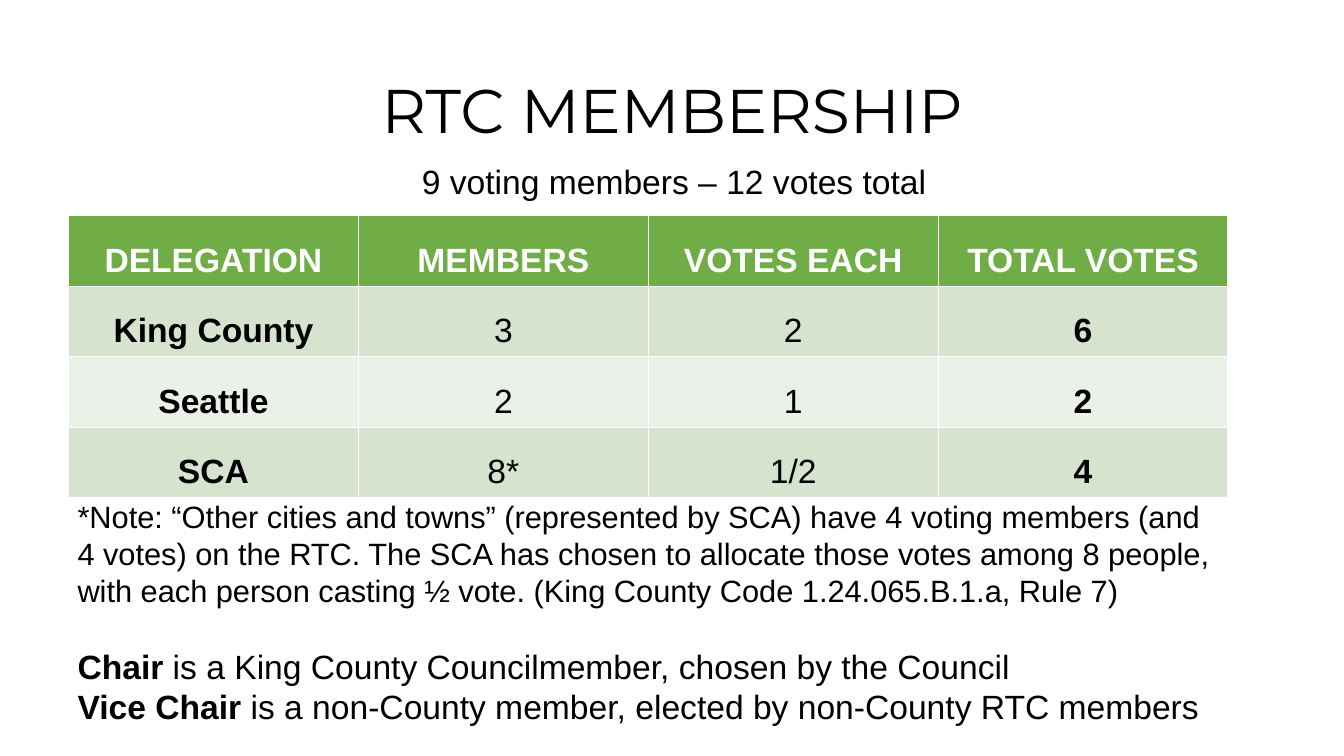
from dataclasses import dataclass

from pptx import Presentation
from pptx.dml.color import RGBColor
from pptx.enum.text import MSO_ANCHOR, PP_ALIGN
from pptx.util import Emu, Inches, Pt

BLACK = RGBColor(0x00, 0x00, 0x00)
WHITE = RGBColor(0xFF, 0xFF, 0xFF)
HEADER_GREEN = RGBColor(0x70, 0xAD, 0x47)
DARK_BAND = RGBColor(0xD5, 0xE3, 0xCF)
LIGHT_BAND = RGBColor(0xEB, 0xF1, 0xE9)

SLIDE_WIDTH, SLIDE_HEIGHT = Inches(13.33), Inches(7.5)
BODY_SIZE, NOTE_SIZE, TITLE_SIZE = 24, 22, 44


@dataclass(frozen=True)
class Area:
    """A rectangle in percent of the slide's width and height."""
    left: float
    top: float
    width: float
    height: float

    def lengths(self) -> tuple[Emu, Emu, Emu, Emu]:
        return (Emu(int(SLIDE_WIDTH * self.left / 100)),
                Emu(int(SLIDE_HEIGHT * self.top / 100)),
                Emu(int(SLIDE_WIDTH * self.width / 100)),
                Emu(int(SLIDE_HEIGHT * self.height / 100)))


@dataclass(frozen=True)
class Delegation:
    name: str
    members: str
    votes_each: str
    total_votes: str

    def texts(self) -> tuple[str, ...]:
        return self.name, self.members, self.votes_each, self.total_votes


@dataclass(frozen=True)
class Officer:
    role: str
    rule: str


TITLE_AREA = Area(6.9, 5.33, 86.27, 19.33)
SUBTITLE_AREA = Area(7.13, 20.67, 86.05, 6.67)
TABLE_AREA = Area(5.1, 28.53, 86.27, 34.93)
NOTE_AREA = Area(5.03, 65.2, 86.05, 31.87)

HEADINGS = Delegation("DELEGATION", "MEMBERS", "VOTES EACH", "TOTAL VOTES")
DELEGATIONS = (
    Delegation("King County", "3", "2", "6"),
    Delegation("Seattle", "2", "1", "2"),
    Delegation("SCA", "8*", "1/2", "4"),
)
NOTE = ("*Note: “Other cities and towns” (represented by SCA) have 4 voting members "
        "(and 4 votes) on the RTC. The SCA has chosen to allocate those votes among "
        "8 people, with each person casting ½ vote. "
        "(King County Code 1.24.065.B.1.a, Rule 7)")
OFFICERS = (
    Officer("Chair", " is a King County Councilmember, chosen by the Council"),
    Officer("Vice Chair", " is a non-County member, elected by non-County RTC members"),
)


def add_span(para, text: str, *, size: float = BODY_SIZE, font: str = "Arial",
             color: RGBColor = BLACK, bold: bool = False) -> None:
    span = para.add_run()
    span.text = text
    span.font.size = Pt(size)
    span.font.name = font
    span.font.color.rgb = color
    span.font.bold = bold


def add_text_frame(page, area: Area, anchor: MSO_ANCHOR = MSO_ANCHOR.TOP):
    frame = page.shapes.add_textbox(*area.lengths()).text_frame
    frame.word_wrap = True
    frame.vertical_anchor = anchor
    return frame


def add_headline(page) -> None:
    title = add_text_frame(page, TITLE_AREA, MSO_ANCHOR.MIDDLE).paragraphs[0]
    title.alignment = PP_ALIGN.CENTER
    title.line_spacing = 0.9
    add_span(title, "RTC MEMBERSHIP", size=TITLE_SIZE, font="Montserrat")

    subtitle = add_text_frame(page, SUBTITLE_AREA).paragraphs[0]
    subtitle.alignment = PP_ALIGN.CENTER
    add_span(subtitle, "9 voting members – 12 votes total")


def fill_cell(cell, text: str, *, fill: RGBColor, color: RGBColor, bold: bool) -> None:
    cell.fill.solid()
    cell.fill.fore_color.rgb = fill
    cell.vertical_anchor = MSO_ANCHOR.MIDDLE
    para = cell.text_frame.paragraphs[0]
    para.alignment = PP_ALIGN.CENTER
    para.line_spacing = 1.5
    para.space_before = para.space_after = Pt(6)
    add_span(para, text, color=color, bold=bold)


def add_votes_table(page) -> None:
    """The default table style supplies the white rules between the cells."""
    lines = (HEADINGS, *DELEGATIONS)
    column_count = len(HEADINGS.texts())
    table = page.shapes.add_table(len(lines), column_count, *TABLE_AREA.lengths()).table
    for row, line in enumerate(lines):
        is_header = row == 0
        band = DARK_BAND if row % 2 else LIGHT_BAND
        for column, text in enumerate(line.texts()):
            fill_cell(table.cell(row, column), text,
                      fill=HEADER_GREEN if is_header else band,
                      color=WHITE if is_header else BLACK,
                      bold=is_header or column in (0, column_count - 1))


def add_notes(page) -> None:
    frame = add_text_frame(page, NOTE_AREA)
    add_span(frame.paragraphs[0], NOTE, size=NOTE_SIZE)
    para = frame.add_paragraph()
    para.space_before = Pt(NOTE_SIZE * 1.2)
    for index, officer in enumerate(OFFICERS):
        if index:
            para.add_line_break()
        add_span(para, officer.role, bold=True)
        add_span(para, officer.rule)


def main() -> None:
    deck = Presentation()
    deck.slide_width, deck.slide_height = SLIDE_WIDTH, SLIDE_HEIGHT
    page = deck.slides.add_slide(deck.slide_layouts[6])
    add_headline(page)
    add_votes_table(page)
    add_notes(page)
    deck.save("out.pptx")


if __name__ == "__main__":
    main()
